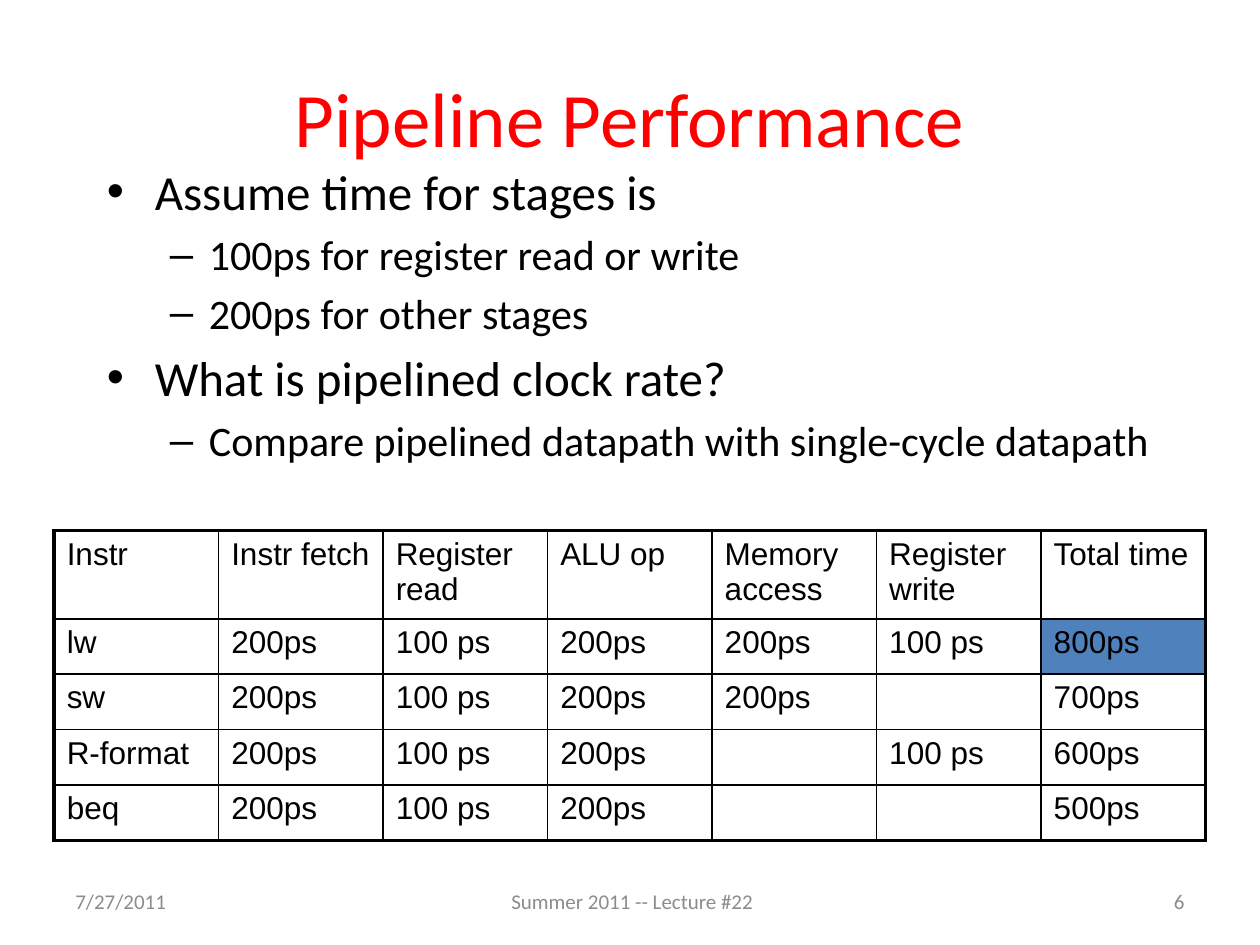
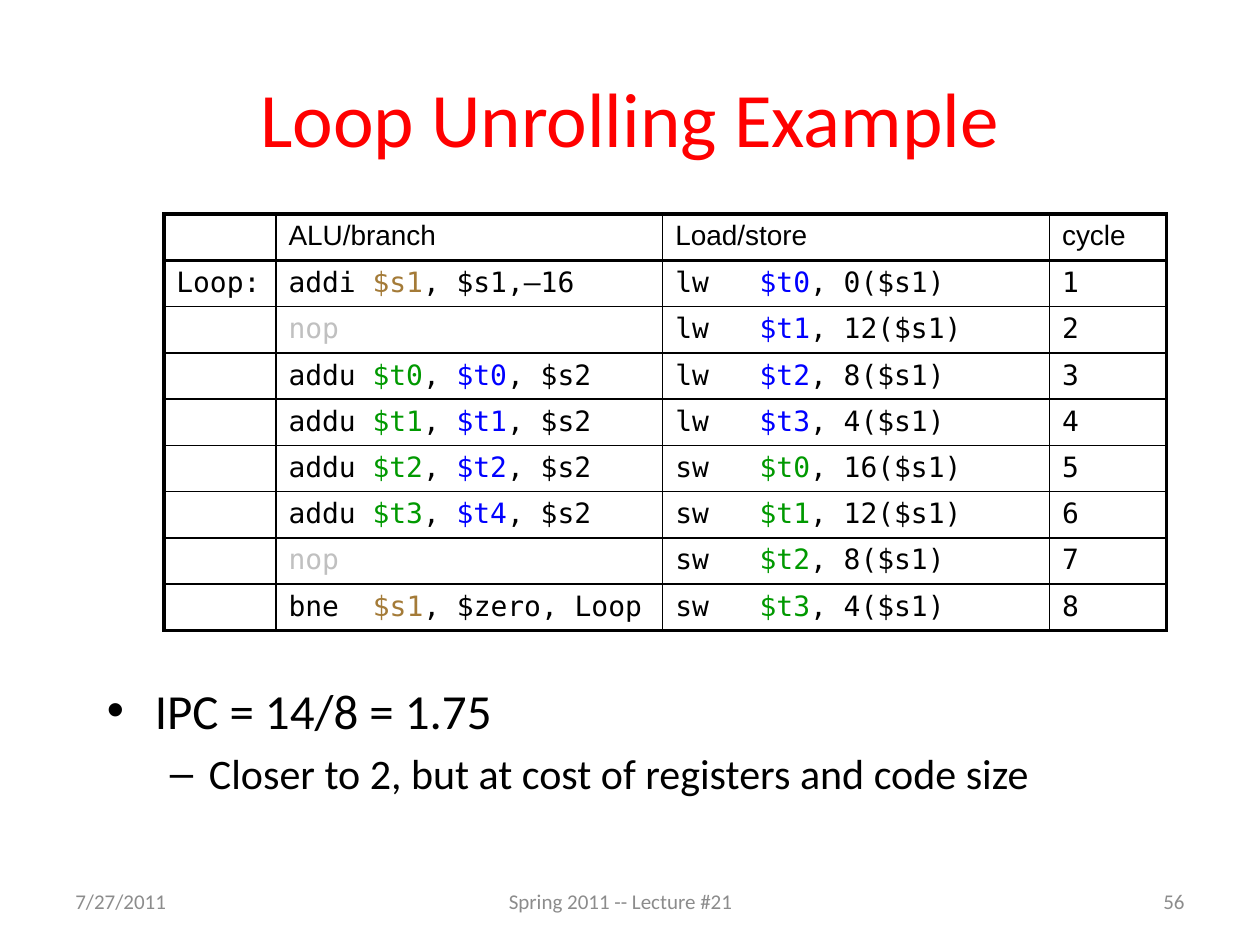
"""Build two lecture slides on pipeline performance and loop unrolling."""
from dataclasses import dataclass
from typing import Any, NamedTuple

from lxml import etree
import pptx
import pptx.dml.color
import pptx.enum.text
import pptx.oxml.ns
import pptx.util

Inches = pptx.util.Inches
Pt = pptx.util.Pt
qn = pptx.oxml.ns.qn
ALIGN = pptx.enum.text.PP_ALIGN
ANCHOR = pptx.enum.text.MSO_ANCHOR

BLACK, RED, GREY, HIGHLIGHT = "000000", "FF0000", "8C8C8C", "4F81BD"
CODE_COLORS = {"c": "A47B38", "b": "0000FF", "g": "009900", "n": "C0C0C0"}
SANS, PLAIN, MONO = "Calibri", "Arial", "DejaVu Sans Mono"
OPERAND_TAB = 0.67
OUTER, HEADER, INNER = 2.25, 1.5, 1


class Box(NamedTuple):
    """Left, top, width and height in inches."""
    left: float
    top: float
    width: float
    height: float

    def lengths(self) -> list[int]:
        """Return the four values as lengths."""
        return [Inches(value) for value in self]


class Level(NamedTuple):
    """Look of one outline level."""
    mark: str
    size: int
    margin: float
    hanging: float


class Point(NamedTuple):
    """One outline entry."""
    level: int
    text: str


LEVELS = [Level("•", 28, 0.38, 0.38), Level("–", 24, 0.81, 0.31)]


@dataclass
class Grid:
    """A ruled table; |c...| in a cell colours that part."""
    box: Box
    columns: list[float]
    heights: list[float]
    rows: list[list[str]]
    size: int
    body_font: str
    highlighted: tuple[int, int] | None = None


@dataclass
class Lecture:
    """Content of one slide."""
    title: str
    course: str
    course_left: float
    number: str
    outline_box: Box
    outline: list[Point]
    grid: Grid


def rgb(value: str) -> pptx.dml.color.RGBColor:
    """Turn a hex string into a colour."""
    return pptx.dml.color.RGBColor.from_string(value)


def write(paragraph: Any, text: str, *, size: int, font: str = SANS,
          color: str = BLACK, align: Any = ALIGN.LEFT) -> None:
    """Fill a paragraph, colouring the parts set between bars."""
    paragraph.alignment = align
    for index, part in enumerate(text.split("|")):
        if not part:
            continue
        marked = index % 2 == 1
        run = paragraph.add_run()
        run.text = part[1:] if marked else part
        run.font.size = Pt(size)
        run.font.name = font
        run.font.color.rgb = rgb(CODE_COLORS[part[0]] if marked else color)


def add_frame(slide: Any, box: Box, anchor: Any = ANCHOR.MIDDLE) -> Any:
    """Add a wrapping text box and return its text frame."""
    frame = slide.shapes.add_textbox(*box.lengths()).text_frame
    frame.word_wrap = True
    frame.vertical_anchor = anchor
    return frame


def add_line(slide: Any, box: Box, text: str, **style: Any) -> None:
    """Add a text box of one paragraph."""
    write(add_frame(slide, box).paragraphs[0], text, **style)


def add_outline(slide: Any, box: Box, points: list[Point]) -> None:
    """Add a bulleted outline."""
    frame = add_frame(slide, box, ANCHOR.TOP)
    for index, point in enumerate(points):
        level = LEVELS[point.level]
        paragraph = frame.add_paragraph() if index else frame.paragraphs[0]
        paragraph.level = point.level
        if index:
            paragraph.space_before = Pt(level.size * 0.2)
        write(paragraph, point.text, size=level.size)
        properties = paragraph._p.get_or_add_pPr()
        properties.set("marL", str(Inches(level.margin)))
        properties.set("indent", str(-Inches(level.hanging)))
        etree.SubElement(properties, qn("a:buFont"), typeface=PLAIN)
        etree.SubElement(properties, qn("a:buChar"), char=level.mark)


def rule_cell(cell: Any, widths: dict[str, float]) -> None:
    """Draw the cell's borders, given their widths by side."""
    properties = cell._tc.get_or_add_tcPr()
    for side, width in widths.items():
        border = etree.SubElement(properties, qn(f"a:ln{side}"), w=str(Pt(width)))
        fill = etree.SubElement(border, qn("a:solidFill"))
        etree.SubElement(fill, qn("a:srgbClr"), val=BLACK)


def add_grid(slide: Any, grid: Grid) -> None:
    """Add a table with a heavy frame and a ruled-off header."""
    last_row, last_column = len(grid.rows) - 1, len(grid.columns) - 1
    table = slide.shapes.add_table(
        last_row + 1, last_column + 1, *grid.box.lengths()).table
    table.first_row = table.horz_banding = False
    for column, width in zip(table.columns, grid.columns):
        column.width = Inches(width)
    for row, height in zip(table.rows, grid.heights):
        row.height = Inches(height)
    for r, texts in enumerate(grid.rows):
        for c, text in enumerate(texts):
            cell = table.cell(r, c)
            rule_cell(cell, {
                "L": INNER if c else OUTER,
                "R": OUTER if c == last_column else INNER,
                "T": {0: OUTER, 1: HEADER}.get(r, INNER),
                "B": {0: HEADER, last_row: OUTER}.get(r, INNER)})
            if (r, c) == grid.highlighted:
                cell.fill.solid()
                cell.fill.fore_color.rgb = rgb(HIGHLIGHT)
            else:
                cell.fill.background()
            paragraph = cell.text_frame.paragraphs[0]
            write(paragraph, text, size=grid.size,
                  font=grid.body_font if r else PLAIN)
            if "\t" in text:
                stops = etree.SubElement(paragraph._p.get_or_add_pPr(), qn("a:tabLst"))
                etree.SubElement(stops, qn("a:tab"), pos=str(Inches(OPERAND_TAB)), algn="l")
            if not text:
                etree.SubElement(paragraph._p, qn("a:endParaRPr"), sz=str(grid.size * 100))


def add_lecture(deck: Any, lecture: Lecture) -> None:
    """Add one slide with title, outline, table and footer."""
    slide = deck.slides.add_slide(deck.slide_layouts[6])
    footers = [(0.5, "7/27/2011", ALIGN.LEFT),
               (lecture.course_left, lecture.course, ALIGN.LEFT),
               (7.17, lecture.number, ALIGN.RIGHT)]
    for left, text, align in footers:
        add_line(slide, Box(left, 6.95, 2.33, 0.4), text,
                 size=12, color=GREY, align=align)
    add_line(slide, Box(0.5, 0.3, 9, 1.25), lecture.title,
             size=44, color=RED, align=ALIGN.CENTER)
    add_outline(slide, lecture.outline_box, lecture.outline)
    add_grid(slide, lecture.grid)


PERFORMANCE = Lecture(
    "Pipeline Performance", "Summer 2011 -- Lecture #22", 3.96, "6",
    Box(0.75, 1.23, 9.05, 2.77),
    [Point(0, "Assume time for stages is"),
     Point(1, "100ps for register read or write"),
     Point(1, "200ps for other stages"),
     Point(0, "What is pipelined clock rate?"),
     Point(1, "Compare pipelined datapath with single-cycle datapath")],
    Grid(Box(0.43, 4.21, 9.14, 2.42), [9.14 / 7] * 7, [0.66] + [0.44] * 4, [
        ["Instr", "Instr fetch", "Register read", "ALU op",
         "Memory access", "Register write", "Total time"],
        ["lw", "200ps", "100 ps", "200ps", "200ps", "100 ps", "800ps"],
        ["sw", "200ps", "100 ps", "200ps", "200ps", "", "700ps"],
        ["R-format", "200ps", "100 ps", "200ps", "", "100 ps", "600ps"],
        ["beq", "200ps", "100 ps", "200ps", "", "", "500ps"],
    ], 18, PLAIN, highlighted=(1, 6)))

UNROLLING = Lecture(
    "Loop Unrolling Example", "Spring 2011 -- Lecture #21", 3.94, "56",
    Box(0.75, 5.35, 9.05, 1.47),
    [Point(0, "IPC = 14/8 = 1.75"),
     Point(1, "Closer to 2, but at cost of registers and code size")],
    Grid(Box(1.3, 1.7, 7.96, 3.21), [0.89, 3.07, 3.07, 0.93], [0.35] + [0.36] * 8, [
        ["", "ALU/branch", "Load/store", "cycle"],
        ["Loop:", "addi |c$s1|, $s1,–16", "lw\t|b$t0|, 0($s1)", "1"],
        ["", "|nnop|", "lw\t|b$t1|, 12($s1)", "2"],
        ["", "addu |g$t0|, |b$t0|, $s2", "lw\t|b$t2|, 8($s1)", "3"],
        ["", "addu |g$t1|, |b$t1|, $s2", "lw\t|b$t3|, 4($s1)", "4"],
        ["", "addu |g$t2|, |b$t2|, $s2", "sw\t|g$t0|, 16($s1)", "5"],
        ["", "addu |g$t3|, |b$t4|, $s2", "sw\t|g$t1|, 12($s1)", "6"],
        ["", "|nnop|", "sw\t|g$t2|, 8($s1)", "7"],
        ["", "bne\t|c$s1|, $zero, Loop", "sw\t|g$t3|, 4($s1)", "8"],
    ], 16, MONO))


def main() -> None:
    """Build and save the deck."""
    deck = pptx.Presentation()
    deck.slide_width, deck.slide_height = Inches(10), Inches(7.5)
    for lecture in (PERFORMANCE, UNROLLING):
        add_lecture(deck, lecture)
    deck.save("out.pptx")


if __name__ == "__main__":
    main()
